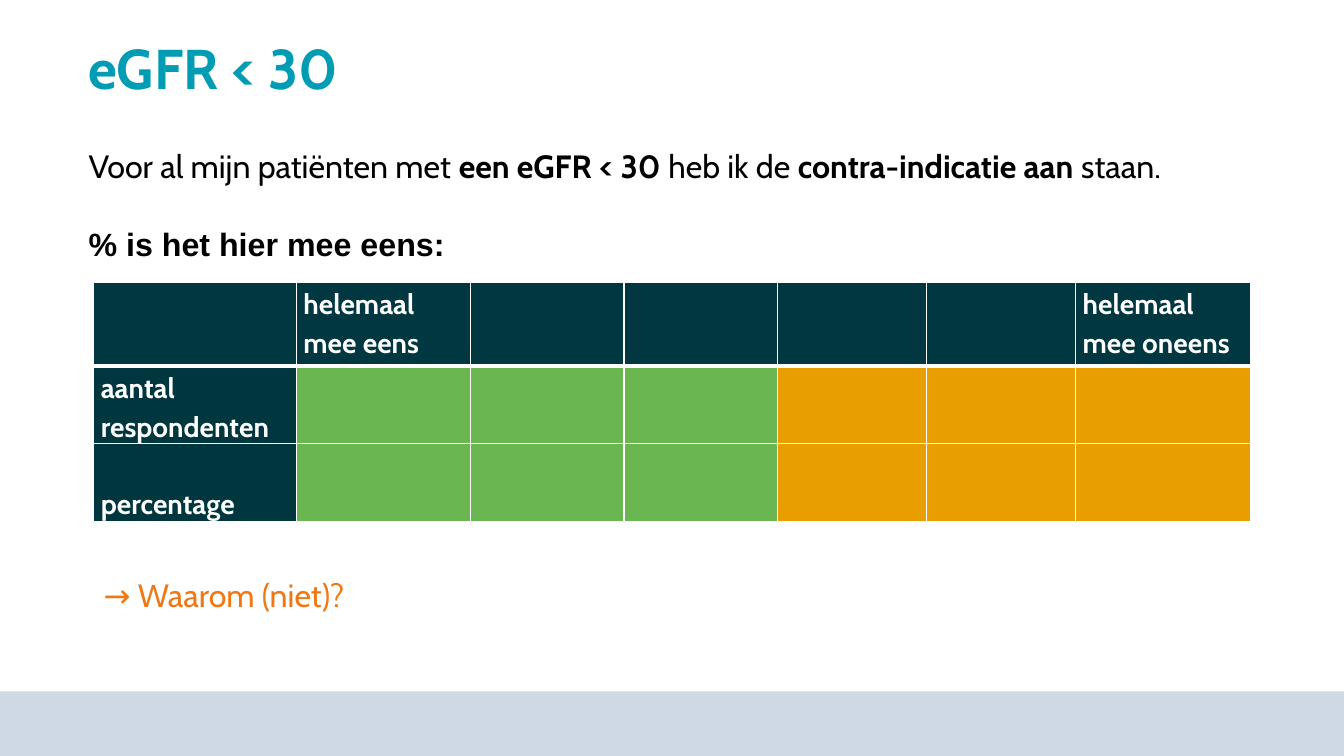
from lxml import etree
from pptx import Presentation
from pptx.dml.color import RGBColor
from pptx.enum.shapes import MSO_SHAPE
from pptx.enum.text import MSO_ANCHOR
from pptx.oxml.ns import qn
from pptx.util import Inches, Pt

RECTANGLE = MSO_SHAPE.RECTANGLE
TOP, MIDDLE, BOTTOM = MSO_ANCHOR.TOP, MSO_ANCHOR.MIDDLE, MSO_ANCHOR.BOTTOM
TEAL = RGBColor(0x00, 0x9C, 0xB4)
BLACK = RGBColor(0x00, 0x00, 0x00)
WHITE = RGBColor(0xFF, 0xFF, 0xFF)
ORANGE = RGBColor(0xF0, 0x78, 0x14)
FOOTER_BLUE = RGBColor(0xCE, 0xD9, 0xE5)
HEADER_DARK = RGBColor(0x00, 0x37, 0x41)
LABEL_DARK = RGBColor(0x00, 0x37, 0x3E)
GREEN = RGBColor(0x6A, 0xB6, 0x50)
AMBER = RGBColor(0xE8, 0x9E, 0x00)


def add_text(left, top, width, height, paragraphs, size, color, anchor=TOP):
    box = page.shapes.add_textbox(Inches(left), Inches(top), Inches(width), Inches(height))
    frame = box.text_frame
    frame.word_wrap = True
    frame.vertical_anchor = anchor
    for index, (font_name, spans) in enumerate(paragraphs):
        para = frame.add_paragraph() if index else frame.paragraphs[0]
        para.font.name = font_name
        para.font.size = Pt(size)
        para.font.color.rgb = color
        for text, bold in spans:
            span = para.add_run()
            span.text = text
            span.font.bold = bold
    return frame


def add_borders(cell, bottom_width):
    properties = cell._tc.get_or_add_tcPr()
    for index, (side, width) in enumerate((("a:lnL", 1), ("a:lnR", 1), ("a:lnT", 1), ("a:lnB", bottom_width))):
        line = etree.Element(qn(side), w=str(Pt(width)))
        fill = etree.SubElement(line, qn("a:solidFill"))
        etree.SubElement(fill, qn("a:srgbClr"), val=str(WHITE))
        properties.insert(index, line)


deck = Presentation()
deck.slide_width = Inches(13.33)
deck.slide_height = Inches(7.5)
page = deck.slides.add_slide(deck.slide_layouts[6])

footer = page.shapes.add_shape(RECTANGLE, 0, Inches(6.86), Inches(13.33), Inches(0.64))
footer.shadow.inherit = False
footer.fill.solid()
footer.fill.fore_color.rgb = FOOTER_BLUE
footer.line.fill.background()

title = add_text(0.78, 0.36, 10.68, 0.71, [("Cabin", [("eGFR < 30", True)])], 40, TEAL)
title.paragraphs[0].line_spacing = 0.9

column_widths = [2.01, 1.73, 1.52, 1.52, 1.48, 1.48, 1.73]
row_heights = [0.83, 0.71, 0.78]
labels = {
    (0, 1): ["helemaal mee eens"],
    (0, 6): ["helemaal mee oneens"],
    (1, 0): ["aantal", "respondenten"],
    (2, 0): ["percentage"],
}
table = page.shapes.add_table(
    len(row_heights), len(column_widths), Inches(0.93), Inches(2.8), Inches(11.46), Inches(2.35)
).table
for column, width in zip(table.columns, column_widths):
    column.width = Inches(width)
for row_index, (row, height) in enumerate(zip(table.rows, row_heights)):
    row.height = Inches(height)
    for column_index, cell in enumerate(row.cells):
        cell.margin_left = cell.margin_right = Inches(0.07)
        cell.margin_top = cell.margin_bottom = 0
        cell.fill.solid()
        if row_index == 0:
            cell.fill.fore_color.rgb = HEADER_DARK
        elif column_index == 0:
            cell.fill.fore_color.rgb = LABEL_DARK
        else:
            cell.fill.fore_color.rgb = GREEN if column_index < 4 else AMBER
        add_borders(cell, 3 if row_index == 0 else 1)
        cell.text = "\n".join(labels.get((row_index, column_index), []))
        for para in cell.text_frame.paragraphs:
            para.line_spacing = 1.15
            para.font.name = "Cabin"
            para.font.size = Pt(20)
            para.font.bold = True
            para.font.color.rgb = WHITE
table.cell(2, 0).vertical_anchor = BOTTOM

statement = add_text(
    0.78, 1.4, 11.96, 1.26,
    [
        ("Cabin", [
            ("Voor al mijn patiënten met ", False),
            ("een eGFR < 30 ", True),
            ("heb ik de ", False),
            ("contra-indicatie aan ", True),
            ("staan.", False),
        ]),
        ("Arial", [("% is het hier mee eens:", True)]),
    ],
    23, BLACK, MIDDLE,
)
statement.paragraphs[1].space_before = Pt(28)

add_text(0.93, 5.66, 6.67, 0.49, [("Cabin", [("→ Waarom (niet)?", False)])], 23, ORANGE)

deck.save("out.pptx")
